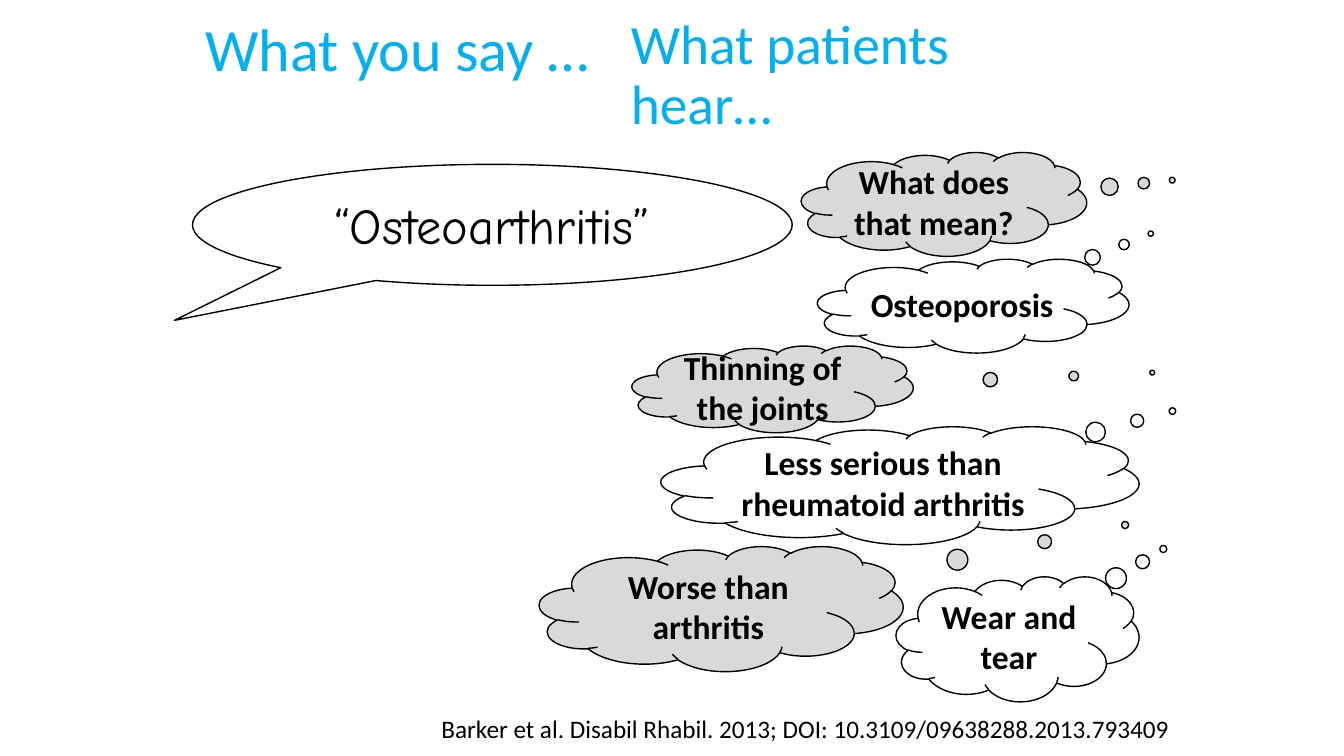
from dataclasses import dataclass

from pptx import Presentation
from pptx.dml.color import RGBColor
from pptx.enum.shapes import MSO_SHAPE
from pptx.enum.text import MSO_ANCHOR, PP_ALIGN
from pptx.util import Pt

CLOUD = MSO_SHAPE.CLOUD_CALLOUT
SPEECH = MSO_SHAPE.OVAL_CALLOUT
LEFT, CENTER, RIGHT = PP_ALIGN.LEFT, PP_ALIGN.CENTER, PP_ALIGN.RIGHT
TOP, MIDDLE = MSO_ANCHOR.TOP, MSO_ANCHOR.MIDDLE


@dataclass(frozen=True)
class Theme:
    heading: RGBColor = RGBColor(0x00, 0xB0, 0xF0)
    ink: RGBColor = RGBColor(0x00, 0x00, 0x00)
    white: RGBColor = RGBColor(0xFF, 0xFF, 0xFF)
    grey: RGBColor = RGBColor(0xD9, 0xD9, 0xD9)
    body_font: str = "Calibri"
    speech_font: str = "Comic Neue"
    say_size: float = 42.9
    hear_size: float = 39.6
    speech_size: float = 36
    thought_size: float = 24
    citation_size: float = 18


theme = Theme()


def write(box, text, align, anchor, spacing=None, **font_format):
    frame = box.text_frame
    frame.word_wrap = True
    frame.vertical_anchor = anchor
    para = frame.paragraphs[0]
    para.alignment = align
    para.line_spacing = spacing
    span = para.add_run()
    span.text = text
    color = font_format.pop("color", theme.ink)
    for name, value in {"name": theme.body_font, **font_format}.items():
        setattr(span.font, name, value)
    span.font.color.rgb = color


def add_bubble(kind, place, tail, fill, text, **font_format):
    """Add an outlined callout whose tail is an offset relative to its size."""
    bubble = page.shapes.add_shape(kind, *map(Pt, place))
    bubble.shadow.inherit = False
    for index, offset in enumerate(tail):
        bubble.adjustments[index] = offset
    bubble.fill.solid()
    bubble.fill.fore_color.rgb = fill
    bubble.line.color.rgb = theme.ink
    bubble.line.width = Pt(1)
    write(bubble, text, CENTER, MIDDLE, **font_format)


deck = Presentation()
deck.slide_width, deck.slide_height = Pt(960), Pt(540)
page = deck.slides.add_slide(deck.slide_layouts[6])

add_bubble(SPEECH, (137.5, 117.4, 428.4, 86.4), (-0.53, 0.79), theme.white,
           "“Osteoarthritis”", name=theme.speech_font, size=Pt(theme.speech_size))

labels = [
    ((443.5, 20.9, 283, 67.7), "What patients hear…", LEFT, MIDDLE, 0.9,
     theme.hear_size, theme.heading),
    ((120.2, -5.8, 326.9, 79.2), "What you say …", CENTER, MIDDLE, None,
     theme.say_size, theme.heading),
    ((292.3, 506.2, 550.1, 28.8),
     "Barker et al. Disabil Rhabil. 2013; DOI: 10.3109/09638288.2013.793409",
     RIGHT, TOP, None, theme.citation_size, theme.ink),
]
for place, text, align, anchor, spacing, size, color in labels:
    label = page.shapes.add_textbox(*map(Pt, place))
    write(label, text, align, anchor, spacing, size=Pt(size), color=color)

thoughts = [
    ((572.4, 108.7, 203.8, 74.2), (0.8, -0.23), theme.grey, "What does that mean?"),
    ((583.9, 185, 222.5, 67), (0.57, -0.77), theme.white, "Osteoporosis"),
    ((472.3, 304.6, 341.3, 84.2), (0.57, -0.63), theme.white,
     "Less serious than rheumatoid arthritis"),
    ((385.2, 390.2, 259.9, 89.3), (1.11, -0.67), theme.grey, "Worse than arthritis"),
    ((640.1, 411.8, 173.5, 89.3), (0.6, -0.72), theme.white, "Wear and tear"),
    ((451.4, 247, 200.9, 61.9), (1.35, -0.19), theme.grey, "Thinning of the joints"),
]
for place, tail, fill, text in thoughts:
    add_bubble(CLOUD, place, tail, fill, text, size=Pt(theme.thought_size), bold=True)

deck.save("out.pptx")
